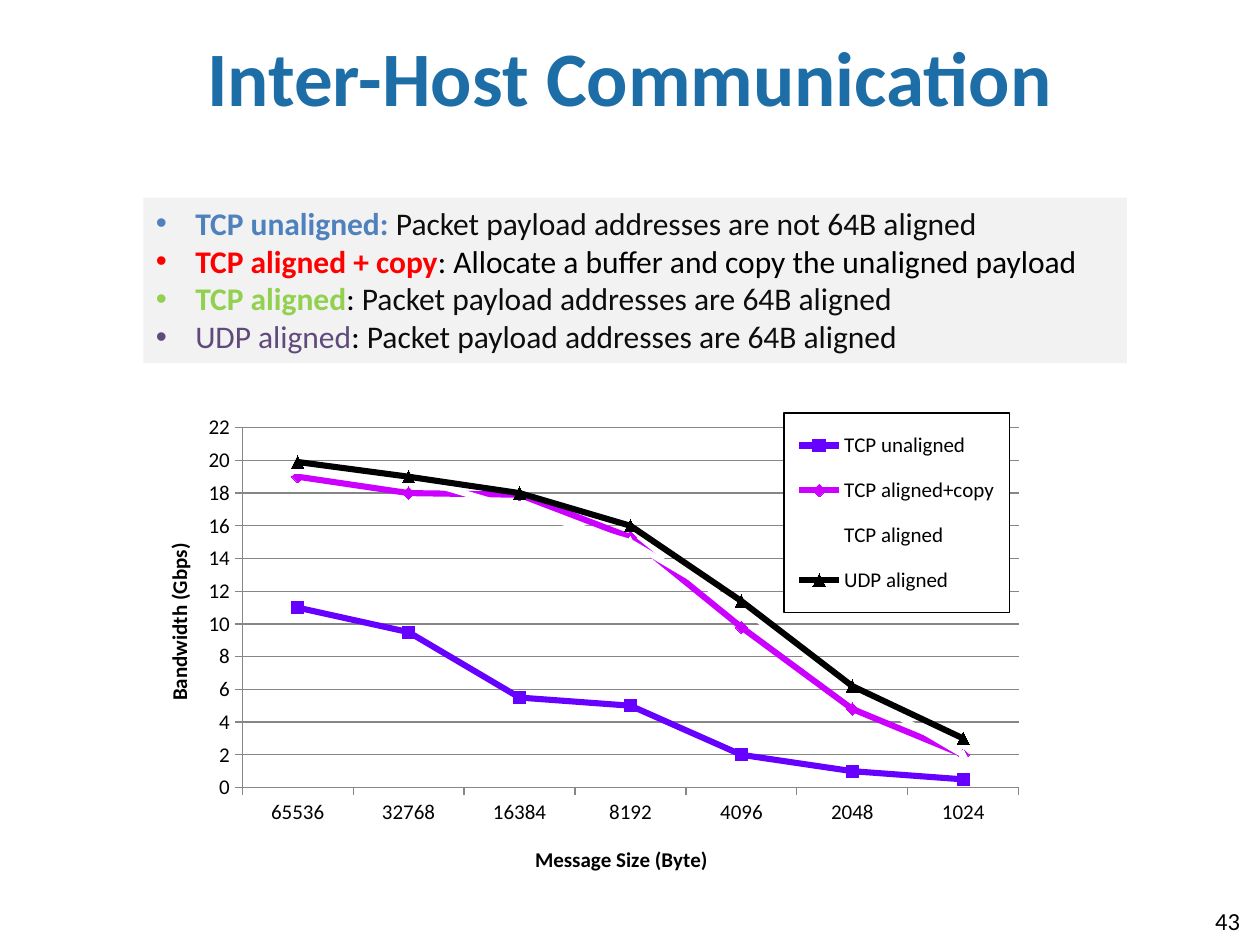
import lxml.etree
import pptx
import pptx.chart.data
import pptx.dml.color
import pptx.enum.chart
import pptx.enum.shapes
import pptx.enum.text
import pptx.oxml
import pptx.oxml.ns
import pptx.util

Pt = pptx.util.Pt
qn = pptx.oxml.ns.qn
FONT = "Calibri"
GREY = "868686"
SIZES = ["65536", "32768", "16384", "8192", "4096", "2048", "1024"]
SERIES = [
    ("TCP unaligned", [11, 9.5, 5.5, 5, 2, 1, 0.5], "6600FF", "SQUARE"),
    ("TCP aligned+copy", [19, 18, 17.9, 15.3, 9.8, 4.8, 2], "CC00FF", "DIAMOND"),
    ("TCP aligned", [19.6, 19, 17, 15, 11, 6, 2], "FFFFFF", "TRIANGLE"),
    ("UDP aligned", [19.9, 19, 18, 16, 11.4, 6.2, 3], "000000", "TRIANGLE"),
]
ALIGNED = "Packet payload addresses are 64B aligned"
NOTES = [
    [("TCP unaligned: ", "4F81BD", True),
     ("Packet payload addresses are not 64B aligned", "0D0D0D", False)],
    [("TCP aligned + copy", "FF0000", True),
     (": Allocate a buffer and copy the unaligned payload", "000000", False)],
    [("TCP aligned", "92D050", True), (": ", "000000", False), (ALIGNED, "0D0D0D", False)],
    [("UDP aligned", "604A7B", False), (": ", "000000", False), (ALIGNED, "0D0D0D", False)],
]


def color(code):
    """Turn a hex string into a colour."""
    return pptx.dml.color.RGBColor.from_string(code)


def style(font, size, code, bold=False):
    """Set the face, size, colour and weight of a font."""
    font.name, font.size, font.bold = FONT, Pt(size), bold
    font.color.rgb = color(code)


def add_text(slide, box, text, size, code, bold=False, wrap=True):
    """Add a centred one-line text box."""
    frame = slide.shapes.add_textbox(*map(Pt, box)).text_frame
    frame.word_wrap = wrap
    frame.vertical_anchor = pptx.enum.text.MSO_ANCHOR.MIDDLE
    para = frame.paragraphs[0]
    para.text = text
    para.alignment = pptx.enum.text.PP_ALIGN.CENTER
    style(para.runs[0].font, size, code, bold)


def add_bullet(para):
    """Give a paragraph a hanging round bullet."""
    props = para._p.get_or_add_pPr()
    props.set("marL", str(Pt(22.5)))
    props.set("indent", str(-Pt(22.5)))
    lxml.etree.SubElement(props, qn("a:buFont")).set("typeface", "Arial")
    lxml.etree.SubElement(props, qn("a:buChar")).set("char", "•")


def add_notes(slide, box):
    """Add the grey panel with its bulleted notes."""
    panel = slide.shapes.add_shape(
        pptx.enum.shapes.MSO_SHAPE.RECTANGLE, *map(Pt, box))
    panel.shadow.inherit = False
    panel.fill.solid()
    panel.fill.fore_color.rgb = color("F2F2F2")
    panel.line.fill.background()
    frame = panel.text_frame
    frame.word_wrap = True
    frame.vertical_anchor = pptx.enum.text.MSO_ANCHOR.TOP
    for row, parts in enumerate(NOTES):
        para = frame.add_paragraph() if row else frame.paragraphs[0]
        para.alignment = pptx.enum.text.PP_ALIGN.LEFT
        add_bullet(para)
        for text, code, bold in parts:
            run = para.add_run()
            run.text = text
            style(run.font, 18, code, bold)


def place(node, index, inner=False, **parts):
    """Fix a chart part at fractions of the chart area."""
    for old in node.findall(qn("c:layout")):
        node.remove(old)
    layout = pptx.oxml.parse_xml(
        '<c:layout xmlns:c="http://schemas.openxmlformats.org/drawingml/2006/chart"/>')
    manual = lxml.etree.SubElement(layout, qn("c:manualLayout"))
    fields = {"layoutTarget": "inner"} if inner else {}
    fields.update(xMode="edge", yMode="edge", **parts)
    for name, value in fields.items():
        lxml.etree.SubElement(manual, qn("c:" + name)).set("val", str(value))
    node.insert(index, layout)


def set_axis(axis, title, left, top):
    """Style an axis and place its title."""
    axis.major_tick_mark = pptx.enum.chart.XL_TICK_MARK.OUTSIDE
    axis.format.line.color.rgb = color(GREY)
    style(axis.tick_labels.font, 12, "000000")
    para = axis.axis_title.text_frame.paragraphs[0]
    para.text = title
    style(para.runs[0].font, 12, "000000", True)
    place(axis.axis_title._element, 1, x=left, y=top)


def set_legend(chart):
    """Lay a framed white legend over the plot."""
    chart.has_legend = True
    legend = chart.legend
    legend.position = pptx.enum.chart.XL_LEGEND_POSITION.RIGHT
    legend.include_in_layout = True
    style(legend.font, 12, "000000")
    node = legend._element
    place(node, 1, x=0.72, y=0.02, w=0.25, h=0.41)
    frame = pptx.oxml.parse_xml(
        '<c:spPr xmlns:c="http://schemas.openxmlformats.org/drawingml/2006/chart"'
        ' xmlns:a="http://schemas.openxmlformats.org/drawingml/2006/main">'
        '<a:solidFill><a:srgbClr val="FFFFFF"/></a:solidFill>'
        '<a:ln w="9525"><a:solidFill><a:srgbClr val="000000"/></a:solidFill></a:ln>'
        '</c:spPr>')
    node.find(qn("c:overlay")).addnext(frame)


def set_line(line, code, mark):
    """Style one series and its markers."""
    line.smooth = False
    line.format.line.width = Pt(3.5)
    line.format.line.color.rgb = color(code)
    line.marker.style = getattr(pptx.enum.chart.XL_MARKER_STYLE, mark)
    line.marker.size = 7
    line.marker.format.fill.solid()
    line.marker.format.fill.fore_color.rgb = color(code)
    line.marker.format.line.color.rgb = color(code)


def add_chart(slide, box):
    """Add the line chart of bandwidth by message size."""
    data = pptx.chart.data.CategoryChartData()
    data.categories = SIZES
    for name, values, _, _ in SERIES:
        data.add_series(name, values)
    chart = slide.shapes.add_chart(
        pptx.enum.chart.XL_CHART_TYPE.LINE_MARKERS, *map(Pt, box), data).chart
    chart.has_title = False
    style(chart.font, 10, "000000")
    chart.plots[0].vary_by_categories = False
    set_axis(chart.category_axis, "Message Size (Byte)", 0.44, 0.9)
    scale = chart.value_axis
    set_axis(scale, "Bandwidth (Gbps)", 0.03, 0.28)
    scale.minimum_scale, scale.maximum_scale, scale.major_unit = 0, 22, 2
    scale.major_gridlines.format.line.color.rgb = color(GREY)
    for line, (_, _, code, mark) in zip(chart.plots[0].series, SERIES):
        set_line(line, code, mark)
    set_legend(chart)
    area = chart._chartSpace.chart.plotArea
    place(area, 0, inner=True, x=0.12, y=0.05, w=0.86, h=0.74)


def main():
    """Build and save the slide."""
    deck = pptx.Presentation()
    deck.slide_width, deck.slide_height = Pt(720), Pt(540)
    slide = deck.slides.add_slide(deck.slide_layouts[6])
    add_text(slide, (686, 514, 31, 24), "43", 14, "000000", wrap=False)
    add_text(slide, (25.5, 15, 669, 57), "Inter-Host Communication", 44, "1D6EA7", True)
    add_chart(slide, (76.5, 230.5, 516, 278))
    add_notes(slide, (82, 113, 562, 94.5))
    deck.save("out.pptx")


if __name__ == "__main__":
    main()
